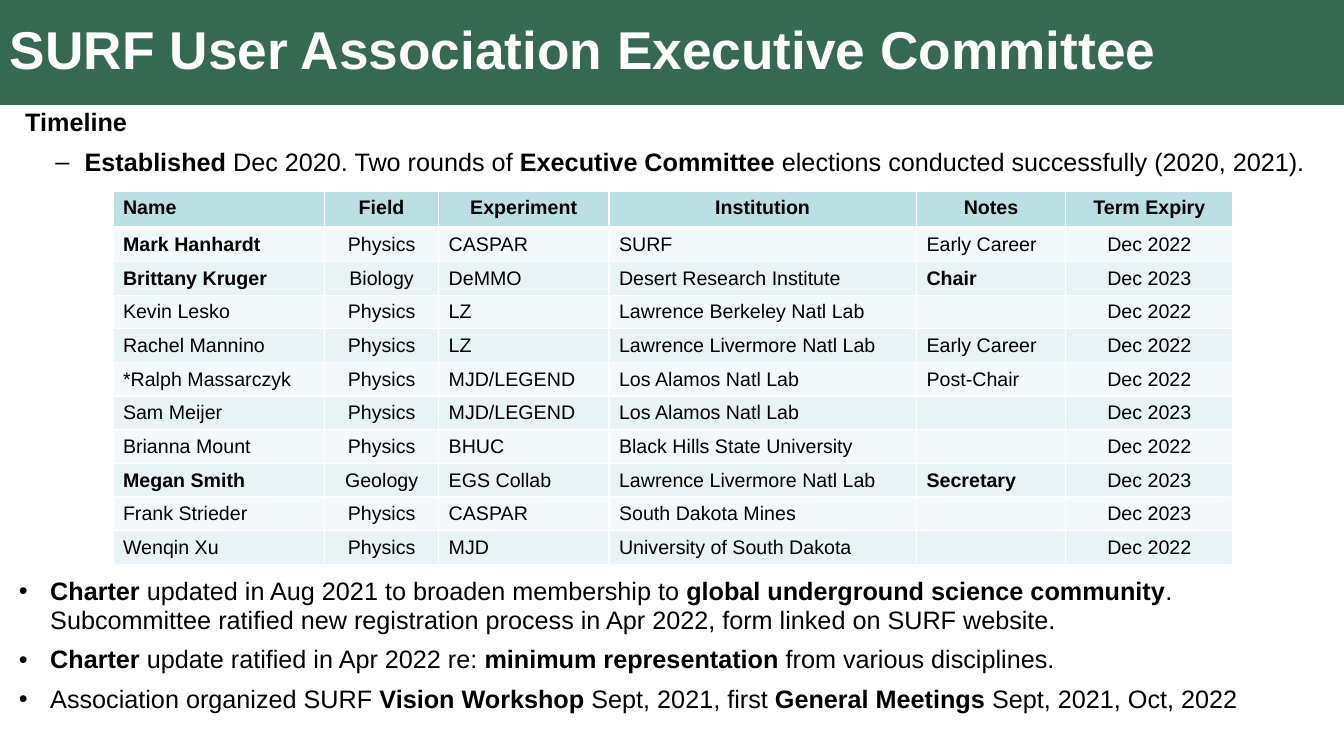
import lxml.etree
import pptx
import pptx.dml.color
import pptx.enum.shapes
import pptx.enum.text
import pptx.oxml.ns
import pptx.util

Inches, Pt, qn = pptx.util.Inches, pptx.util.Pt, pptx.oxml.ns.qn
ANCHOR, ALIGN = pptx.enum.text.MSO_ANCHOR, pptx.enum.text.PP_ALIGN


def paint(fill, color):
    fill.solid()
    fill.fore_color.rgb = pptx.dml.color.RGBColor.from_string(color)


def write(paragraph, text, size=18, color="000000", align=ALIGN.LEFT,
          spacing=None, after=None, bullet=None, margin=0, indent=0):
    """Fill a paragraph; words between ** marks are bold."""
    paragraph.alignment = align
    paragraph.line_spacing = spacing
    if after is not None:
        paragraph.space_after = Pt(after)
    properties = paragraph._p.get_or_add_pPr()
    properties.set("marL", str(Inches(margin)))
    properties.set("indent", str(Inches(indent)))
    if bullet:
        paragraph.level = 1
        lxml.etree.SubElement(properties, qn("a:buFont"), typeface="Arial")
        lxml.etree.SubElement(properties, qn("a:buChar"), char=bullet)
    for number, part in enumerate(text.split("**")):
        if part:
            run = paragraph.add_run()
            run.text = part
            run.font.name = "Arial"
            run.font.size = Pt(size)
            run.font.bold = number % 2 == 1
            paint(run.font.fill, color)
    # The end mark carries the size, so an empty cell stays as low as its row
    lxml.etree.SubElement(paragraph._p, qn("a:endParaRPr"), sz=str(size * 100))


deck = pptx.Presentation()
deck.slide_width, deck.slide_height = Inches(13.33), Inches(7.5)
slide = deck.slides.add_slide(deck.slide_layouts[6])

# Title banner, slightly transparent
banner = slide.shapes.add_shape(
    pptx.enum.shapes.MSO_SHAPE.RECTANGLE, 0, 0, Inches(13.33), Inches(1.04))
banner.shadow.inherit = False
banner.line.fill.background()
paint(banner.fill, "134F33")
banner_color = banner.element.spPr.find(qn("a:solidFill")).find(qn("a:srgbClr"))
lxml.etree.SubElement(banner_color, qn("a:alpha"), val="85000")
banner.text_frame.vertical_anchor = ANCHOR.MIDDLE
banner.text_frame.word_wrap = True
write(banner.text_frame.paragraphs[0], "**SURF User Association Executive Committee**",
      size=38, color="FFFFFF", spacing=0.9)

# Timeline
timeline = slide.shapes.add_textbox(Inches(0.17), Inches(1.04), Inches(13), Inches(2.48)).text_frame
timeline.word_wrap = True
timeline.margin_left = timeline.margin_right = Inches(0.04)
timeline.margin_top = timeline.margin_bottom = Inches(0.04)
write(timeline.paragraphs[0], "**Timeline**", spacing=0.95, after=7.8, margin=0.04)
write(timeline.add_paragraph(),
      "**Established** Dec 2020. Two rounds of **Executive Committee **"
      "elections conducted successfully (2020, 2021).",
      spacing=0.95, after=7.8, bullet="–", margin=0.63, indent=-0.29)

# Committee members
members = [
    ("**Name**", "**Field**", "**Experiment**", "**Institution**", "**Notes**", "**Term Expiry**"),
    ("**Mark Hanhardt**", "Physics", "CASPAR", "SURF", "Early Career", "Dec 2022"),
    ("**Brittany Kruger**", "Biology", "DeMMO", "Desert Research Institute", "**Chair**", "Dec 2023"),
    ("Kevin Lesko", "Physics", "LZ", "Lawrence Berkeley Natl Lab", "", "Dec 2022"),
    ("Rachel Mannino", "Physics", "LZ", "Lawrence Livermore Natl Lab", "Early Career", "Dec 2022"),
    ("*Ralph Massarczyk", "Physics", "MJD/LEGEND", "Los Alamos Natl Lab", "Post-Chair", "Dec 2022"),
    ("Sam Meijer", "Physics", "MJD/LEGEND", "Los Alamos Natl Lab", "", "Dec 2023"),
    ("Brianna Mount", "Physics", "BHUC", "Black Hills State University", "", "Dec 2022"),
    ("**Megan Smith**", "Geology", "EGS Collab", "Lawrence Livermore Natl Lab", "**Secretary**", "Dec 2023"),
    ("Frank Strieder", "Physics", "CASPAR", "South Dakota Mines", "", "Dec 2023"),
    ("Wenqin Xu", "Physics", "MJD", "University of South Dakota", "", "Dec 2022"),
]
widths = [2.1, 1.13, 1.69, 3.05, 1.48, 1.66]
committee = slide.shapes.add_table(
    len(members), len(widths), Inches(1.12), Inches(1.9), Inches(11.1), Inches(3.66)).table
for column, width in zip(committee.columns, widths):
    column.width = Inches(width)
for row, member in enumerate(members):
    committee.rows[row].height = Inches(0.33 if row else 0.36)
    for column, entry in enumerate(member):
        cell = committee.cell(row, column)
        cell.vertical_anchor = ANCHOR.MIDDLE if row else ANCHOR.TOP
        centred = column in (1, 5) or (row == 0 and column > 0)
        write(cell.text_frame.paragraphs[0], entry, size=14,
              align=ALIGN.CENTER if centred else ALIGN.LEFT)
        # White borders, heavier below the header
        for side in ("lnL", "lnR", "lnT", "lnB"):
            weight = 3 if row == 0 and side == "lnB" else 1
            border = lxml.etree.SubElement(
                cell._tc.get_or_add_tcPr(), qn("a:" + side), w=str(Pt(weight)))
            stroke = lxml.etree.SubElement(border, qn("a:solidFill"))
            lxml.etree.SubElement(stroke, qn("a:srgbClr"), val="FFFFFF")
        paint(cell.fill, "BBE0E3" if row == 0 else "F3F9FA" if row % 2 else "E7F3F4")

# Charter and meetings
news = slide.shapes.add_textbox(Inches(-0.16), Inches(5.68), Inches(13.33), Inches(1.48)).text_frame
news.word_wrap = True
items = [
    "**Charter** updated in Aug 2021 to broaden membership to **global underground science "
    "community**. Subcommittee ratified new registration process in Apr 2022, form linked on "
    "SURF website.",
    "**Charter** update ratified in Apr 2022 re: **minimum representation **from various disciplines.",
    "Association organized SURF **Vision Workshop **Sept, 2021, first **General Meetings **"
    "Sept, 2021, Oct, 2022",
]
for number, item in enumerate(items):
    write(news.add_paragraph() if number else news.paragraphs[0], item,
          spacing=0.95, after=7.8, bullet="•", margin=0.56, indent=-0.31)

deck.save("out.pptx")
